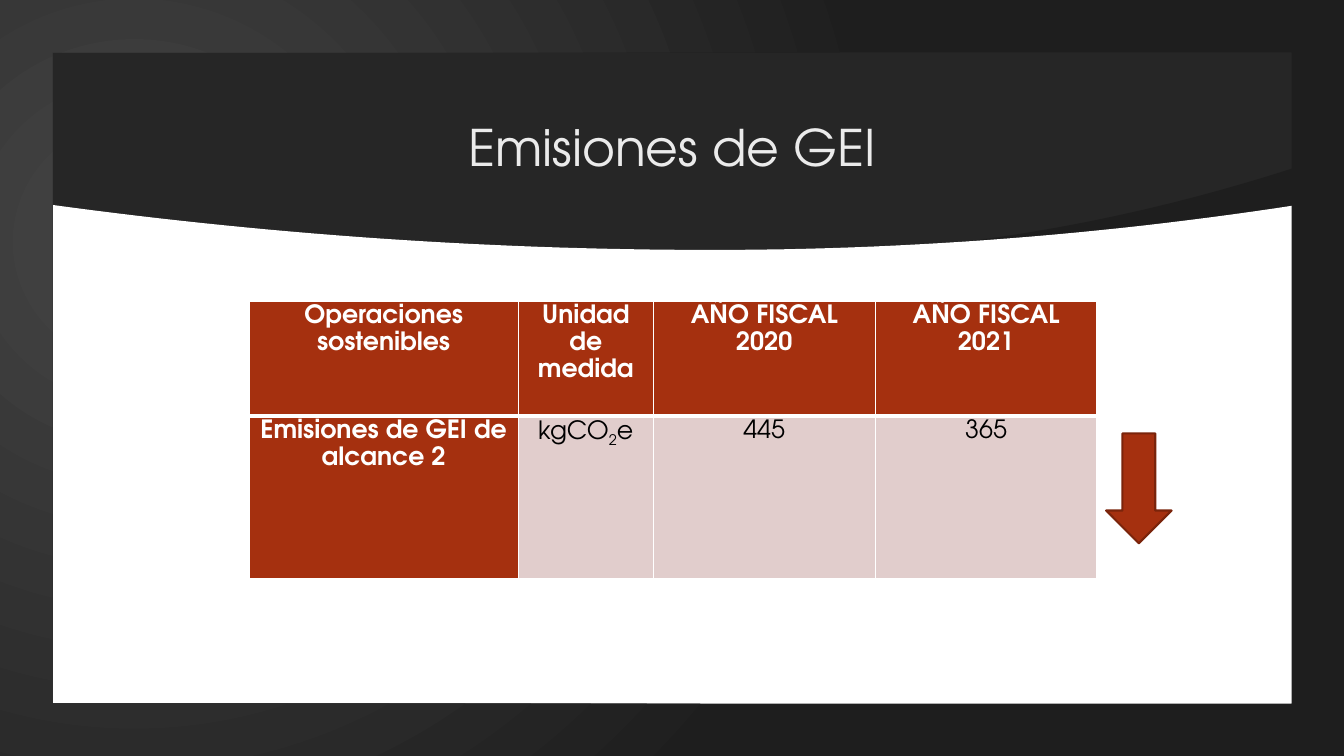
from lxml import etree
from pptx import Presentation
from pptx.dml.color import RGBColor
from pptx.enum import shapes, text
from pptx.oxml import parse_xml
from pptx.oxml.ns import nsdecls, qn
from pptx.util import Inches, Pt

FONT = "TeX Gyre Adventor"
RUST = RGBColor(0xA5, 0x30, 0x0F)
BROWN = RGBColor(0x7A, 0x24, 0x0B)
PINK = RGBColor(0xE1, 0xCD, 0xCC)
DARK = RGBColor(0x26, 0x26, 0x26)
PALE = RGBColor(0xEB, 0xEB, 0xEB)
SMOKE = RGBColor(0x44, 0x44, 0x44)
COAL = RGBColor(0x1E, 0x1E, 0x1E)
WHITE = RGBColor(0xFF, 0xFF, 0xFF)
BLACK = RGBColor(0, 0, 0)

WIDE, HIGH = 13.33, 7.5
EDGE = 0.52
SIDES = ("L", "R", "T", "B")
ROWS = [
    ["Operaciones sostenibles", "Unidad de medida", "AÑO FISCAL\n2020", "AÑO FISCAL\n2021"],
    ["Emisiones de GEI de alcance 2", "kgCO_2_e", "445", "365"],
]


def write(frame, words, size=18, color=BLACK, bold=False, space=None):
    """Fill a frame with centred text; a part between underscores is a subscript."""
    frame.word_wrap = True
    for i, line in enumerate(words.split("\n")):
        para = frame.paragraphs[0] if i == 0 else frame.add_paragraph()
        para.alignment = text.PP_ALIGN.CENTER
        para.line_spacing = space
        for j, part in enumerate(line.split("_")):
            run = para.add_run()
            run.text = part
            font = run.font
            font.name, font.size, font.bold = FONT, Pt(size), bold
            font.color.rgb = color
            if j % 2:
                run._r.get_or_add_rPr().set("baseline", "-25000")


def paint(shape, color, line=None):
    shape.shadow.inherit = False
    shape.fill.solid()
    shape.fill.fore_color.rgb = color
    if line:
        shape.line.color.rgb = line
        shape.line.width = Pt(1.5)
    else:
        shape.line.fill.background()


def glow():
    """Round gradient, lightest near the left edge."""
    return parse_xml(
        f'<a:gradFill {nsdecls("a")} rotWithShape="1"><a:gsLst>'
        f'<a:gs pos="0"><a:srgbClr val="{SMOKE}"/></a:gs>'
        f'<a:gs pos="100000"><a:srgbClr val="{COAL}"/></a:gs></a:gsLst>'
        '<a:path path="circle"><a:fillToRect l="45000" t="65000" r="125000" b="100000"/>'
        '</a:path></a:gradFill>')


def outline(slide, *loops):
    """Draw closed loops of points, in inches, as one shape."""
    loops = [[(Inches(x), Inches(y)) for x, y in loop] for loop in loops]
    pen = slide.shapes.build_freeform(*loops[0][0], scale=1.0)
    for i, loop in enumerate(loops):
        if i:
            pen.move_to(*loop[0])
        pen.add_line_segments(loop[1:], close=True)
    return pen.convert_to_shape()


def bowl(x):
    """Height of the white panel's curved top edge."""
    low, mid = 2.48, 7.07
    reach = mid if x < mid else WIDE - mid
    return low - 0.52 * ((x - mid) / reach) ** 2


def add_back(slide):
    rect = slide.shapes.add_shape(
        shapes.MSO_SHAPE.RECTANGLE, 0, 0, Inches(WIDE), Inches(HIGH))
    paint(rect, DARK)

    steps = [3.53 * i / 30 for i in range(31)]
    curve = [(9.3 + s, 2.43 - 0.11 * s - 0.03 * s * s) for s in steps]
    shade = outline(slide, curve + [(12.89, 2.14), (9.34, 2.5)])
    paint(shade, BLACK)
    tint = shade._element.spPr.find(qn("a:solidFill"))[0]
    etree.SubElement(tint, qn("a:alpha")).set("val", "20000")

    top = [(WIDE * i / 60, bowl(WIDE * i / 60)) for i in range(61)]
    paint(outline(slide, top + [(WIDE, HIGH), (0, HIGH)]), WHITE)

    right, base = WIDE - EDGE, HIGH - EDGE
    frame = outline(
        slide,
        [(0, 0), (0, HIGH), (WIDE, HIGH), (WIDE, 0)],
        [(right, base), (EDGE, base), (EDGE, EDGE), (right, EDGE)])
    paint(frame, DARK)
    solid = frame._element.spPr.find(qn("a:solidFill"))
    solid.getparent().replace(solid, glow())


def add_title(slide):
    title = slide.shapes.title
    title.left, title.top = Inches(1.84), Inches(0.92)
    title.width, title.height = Inches(9.65), Inches(1.07)
    title.text_frame.vertical_anchor = text.MSO_ANCHOR.MIDDLE
    write(title.text_frame, "Emisiones de GEI", size=36, color=PALE)
    slide.shapes._spTree.append(title._element)


def rule(cell, side, width):
    """Put a white border on one side of a cell."""
    line = parse_xml(
        f'<a:ln{side} {nsdecls("a")} w="{Pt(width)}"><a:solidFill>'
        f'<a:srgbClr val="{WHITE}"/></a:solidFill></a:ln{side}>')
    cell._tc.get_or_add_tcPr().insert(SIDES.index(side), line)


def add_grid(slide):
    grid = slide.shapes.add_table(
        2, 4, Inches(2.47), Inches(2.99), Inches(8.4), Inches(2.75)).table
    for col, width in zip(grid.columns, (2.67, 1.34, 2.2, 2.2)):
        col.width = Inches(width)
    for row, height in zip(grid.rows, (1.14, 1.61)):
        row.height = Inches(height)
    for r, words in enumerate(ROWS):
        for c, word in enumerate(words):
            cell = grid.cell(r, c)
            head = r == 0 or c == 0
            cell.fill.solid()
            cell.fill.fore_color.rgb = RUST if head else PINK
            cell.margin_left = cell.margin_right = Inches(0.07)
            cell.margin_top = cell.margin_bottom = 0
            write(cell.text_frame, word, color=WHITE if head else BLACK,
                  bold=head, space=1.15)
            for side in SIDES:
                seam = (r, side) in ((0, "B"), (1, "T"))
                rule(cell, side, 3 if seam else 1)


def add_arrow(slide):
    arrow = slide.shapes.add_shape(
        shapes.MSO_SHAPE.DOWN_ARROW,
        Inches(10.97), Inches(4.3), Inches(0.65), Inches(1.09))
    paint(arrow, RUST, line=BROWN)


def main():
    deck = Presentation()
    deck.slide_width, deck.slide_height = Inches(WIDE), Inches(HIGH)
    slide = deck.slides.add_slide(deck.slide_layouts[5])
    add_back(slide)
    add_title(slide)
    add_grid(slide)
    add_arrow(slide)
    deck.save("out.pptx")


if __name__ == "__main__":
    main()
